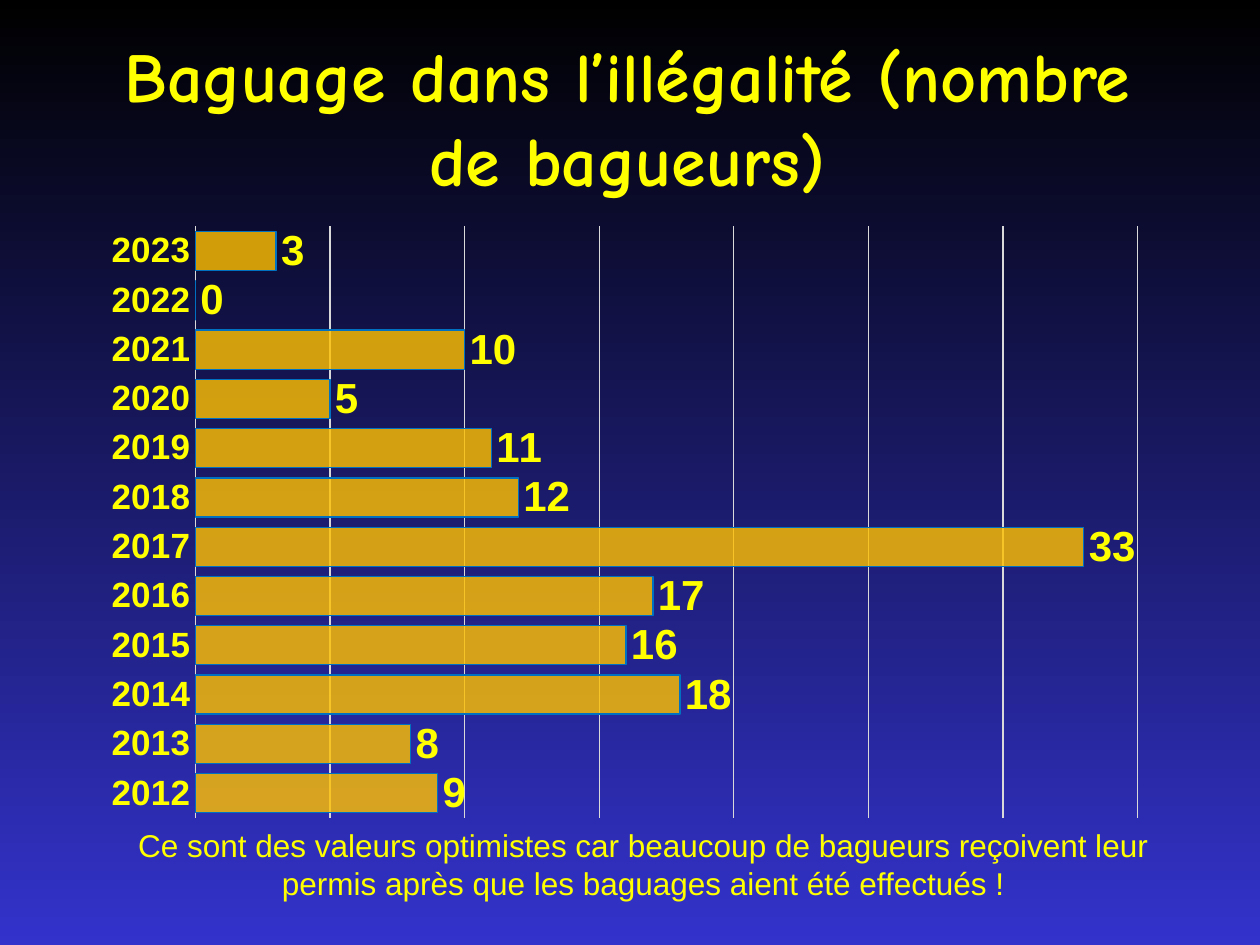
from lxml.etree import SubElement
from pptx import Presentation
from pptx.chart.data import CategoryChartData
from pptx.dml.color import RGBColor
from pptx.enum.chart import XL_CHART_TYPE, XL_LABEL_POSITION, XL_TICK_LABEL_POSITION, XL_TICK_MARK
from pptx.enum.text import MSO_ANCHOR, PP_ALIGN
from pptx.oxml import parse_xml
from pptx.oxml.ns import nsdecls, qn
from pptx.util import Pt

PX = 9144
BLACK = RGBColor(0x00, 0x00, 0x00)
NIGHT_BLUE = RGBColor(0x33, 0x33, 0xCC)
YELLOW = RGBColor(0xFF, 0xFF, 0x00)
GOLD = RGBColor(0xFF, 0xC0, 0x00)
BLUE = RGBColor(0x00, 0x70, 0xC0)
GREY = RGBColor(0xD9, 0xD9, 0xD9)

RINGERS = {
    "2012": 9, "2013": 8, "2014": 18, "2015": 16, "2016": 17, "2017": 33,
    "2018": 12, "2019": 11, "2020": 5, "2021": 10, "2022": 0, "2023": 3,
}


def emu(box):
    return [v * PX for v in box]


def set_font(font, size, color=YELLOW, bold=False, name="Arial"):
    font.size, font.bold, font.name = Pt(size), bold, name
    font.color.rgb = color


def set_line(line, color):
    line.color.rgb = color
    line.width = Pt(0.75)


def add_text(s, box, text, shadow=False, **font):
    sp = s.shapes.add_textbox(*emu(box))
    tf = sp.text_frame
    tf.word_wrap = True
    tf.vertical_anchor = MSO_ANCHOR.TOP
    p = tf.paragraphs[0]
    p.alignment = PP_ALIGN.CENTER
    r = p.add_run()
    r.text = text
    set_font(r.font, **font)
    if shadow:
        fill = r.font._element.find(qn("a:solidFill"))
        fill.addnext(parse_xml(
            f'<a:effectLst {nsdecls("a")}><a:outerShdw dist="35921" dir="2700000">'
            '<a:srgbClr val="000000"/></a:outerShdw></a:effectLst>'))


def set_plot_layout(chart, **fractions):
    plot_area = chart._chartSpace.chart.plotArea
    for old in plot_area.findall(qn("c:layout")):
        plot_area.remove(old)
    layout = parse_xml(f'<c:layout {nsdecls("c")}><c:manualLayout/></c:layout>')
    settings = {"layoutTarget": "inner", "xMode": "edge", "yMode": "edge", **fractions}
    for tag, val in settings.items():
        SubElement(layout[0], qn(f"c:{tag}"), val=str(val))
    plot_area.insert(0, layout)


def add_ringer_chart(s, box):
    data = CategoryChartData()
    data.categories = list(RINGERS)
    data.add_series("Series 1", list(RINGERS.values()))
    chart = s.shapes.add_chart(XL_CHART_TYPE.BAR_CLUSTERED, *emu(box), data).chart
    chart.has_legend = chart.has_title = False
    set_font(chart.font, 10, BLACK)
    set_plot_layout(chart, x=0.1, y=0.02, w=0.88, h=0.96)

    cat = chart.category_axis
    cat.major_tick_mark = cat.minor_tick_mark = XL_TICK_MARK.NONE
    cat.tick_label_position = XL_TICK_LABEL_POSITION.NEXT_TO_AXIS
    set_font(cat.tick_labels.font, 20, bold=True)
    set_line(cat.format.line, GREY)

    val = chart.value_axis
    val.minimum_scale, val.maximum_scale, val.major_unit = 0, 35, 5
    val.has_major_gridlines = True
    set_line(val.major_gridlines.format.line, GREY)
    val.visible = False

    plot = chart.plots[0]
    plot.gap_width = 26
    plot.vary_by_categories = False
    series = plot.series[0]
    series.invert_if_negative = False
    fill = series.format.fill
    fill.solid()
    fill.fore_color.rgb = GOLD
    rgb = series._element.spPr.find(qn("a:solidFill"))[0]
    SubElement(rgb, qn("a:alpha"), val="81000")
    set_line(series.format.line, BLUE)

    labels = series.data_labels
    labels.show_value = True
    labels.position = XL_LABEL_POSITION.OUTSIDE_END
    set_font(labels.font, 24, bold=True)


def set_background(s):
    fill = s.background.fill
    fill.gradient()
    fill.gradient_angle = 270
    for stop, color, pos in zip(fill.gradient_stops, (BLACK, NIGHT_BLUE), (0, 1)):
        stop.color.rgb = color
        stop.position = pos


def main():
    prs = Presentation()
    prs.slide_width, prs.slide_height = emu((1000, 750))
    s = prs.slides.add_slide(prs.slide_layouts[6])
    set_background(s)
    add_text(s, (73, 21, 850, 125), "Baguage dans l’illégalité (nombre de bagueurs)",
             shadow=True, size=40, bold=True, name="Comic Neue")
    add_ringer_chart(s, (70, 170, 850, 489))
    add_text(s, (95, 651, 831, 71),
             "Ce sont des valeurs optimistes car beaucoup de bagueurs reçoivent leur "
             "permis après que les baguages aient été effectués !", size=18)
    prs.save("out.pptx")


if __name__ == "__main__":
    main()
